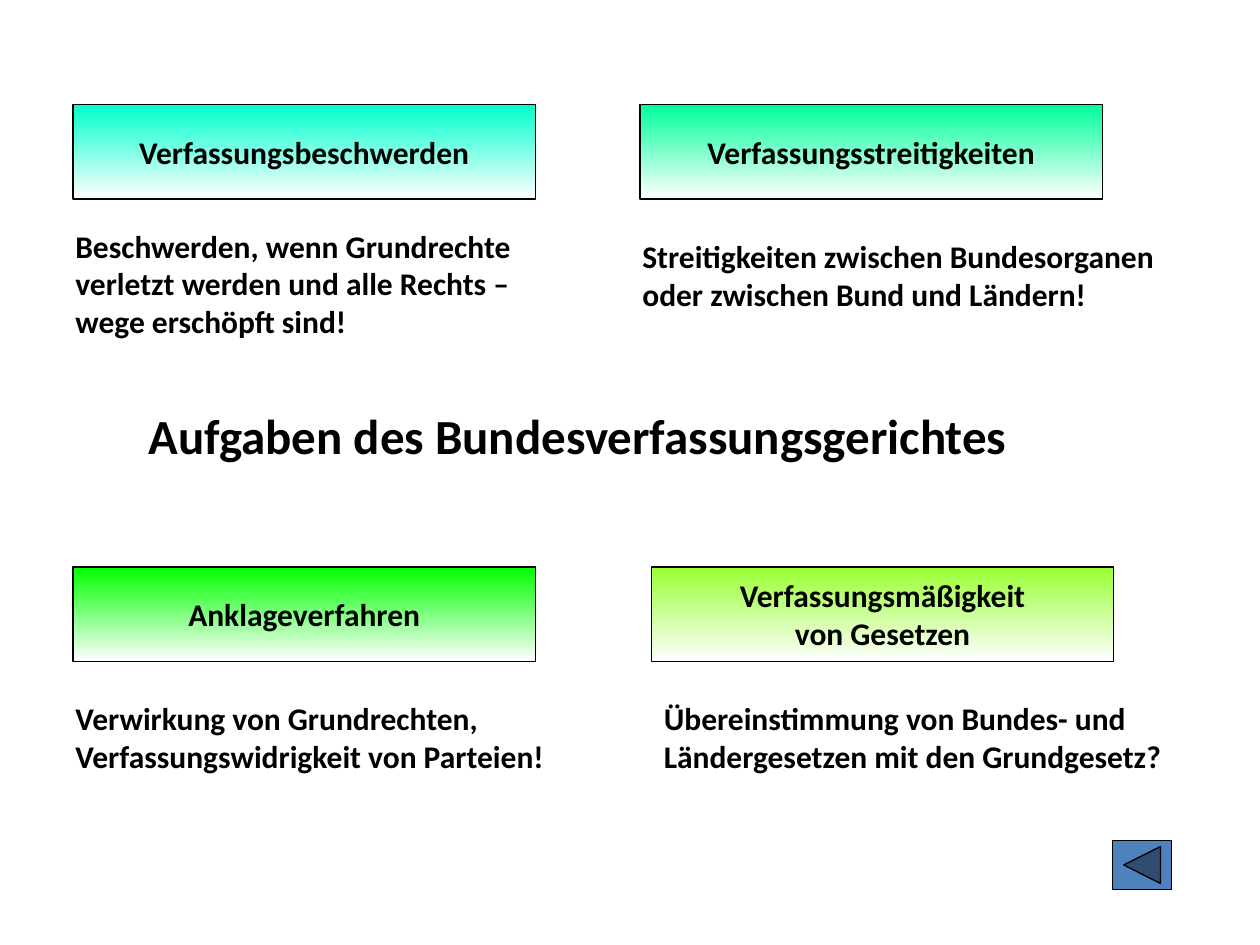
from pptx import Presentation
from pptx.dml.color import RGBColor
from pptx.enum.shapes import MSO_SHAPE
from pptx.enum.text import MSO_ANCHOR, MSO_AUTO_SIZE, PP_ALIGN
from pptx.util import Inches, Pt

RECTANGLE = MSO_SHAPE.RECTANGLE
BACK_BUTTON = MSO_SHAPE.ACTION_BUTTON_BACK_OR_PREVIOUS
LEFT, CENTER, JUSTIFY = PP_ALIGN.LEFT, PP_ALIGN.CENTER, PP_ALIGN.JUSTIFY
TOP, MIDDLE = MSO_ANCHOR.TOP, MSO_ANCHOR.MIDDLE
GROW = MSO_AUTO_SIZE.SHAPE_TO_FIT_TEXT
FONT = "Calibri"
COLORS = {
    "text": "000000",
    "line": "000000",
    "fade": "FFFFFF",
    "complaints": "00FFCC",
    "disputes": "00FF99",
    "impeachment": "00FF00",
    "laws": "99FF33",
    "button": "4F81BD",
}


def rgb(name):
    """Return the named colour."""
    return RGBColor.from_string(COLORS[name])


def write(frame, lines, size, align, anchor=TOP, wrap=False):
    """Fill a text frame with one bold paragraph per line."""
    frame.word_wrap = wrap
    frame.vertical_anchor = anchor
    frame.text = "\n".join(lines)
    for para in frame.paragraphs:
        para.alignment = align
        para.font.name = FONT
        para.font.size = Pt(size)
        para.font.bold = True
        para.font.color.rgb = rgb("text")


def add_title(page, text):
    """Place the slide title between the two rows of tasks."""
    title = page.shapes.title
    title.left, title.top = Inches(1.08), Inches(3.17)
    title.width, title.height = Inches(7.75), Inches(0.57)
    write(title.text_frame, [text], 28, LEFT, wrap=True)
    title.text_frame.auto_size = GROW


def add_outlined(page, kind, left, top, width, height):
    """Add a preset shape with a thin outline and no shadow."""
    shape = page.shapes.add_shape(
        kind, Inches(left), Inches(top), Inches(width), Inches(height))
    shape.shadow.inherit = False
    shape.line.color.rgb = rgb("line")
    shape.line.width = Pt(0.75)
    return shape


def add_heading(page, left, top, color, lines):
    """Add a task heading on a gradient that fades downwards."""
    box = add_outlined(page, RECTANGLE, left, top, 3.67, 0.75)
    box.fill.gradient()
    box.fill.gradient_angle = 270
    for stop, name, position in zip(box.fill.gradient_stops, (color, "fade"), (0, 1)):
        stop.color.rgb = rgb(name)
        stop.position = position
    write(box.text_frame, lines, 18, CENTER, MIDDLE)


def add_description(page, left, top, width, align, lines):
    """Add the explanation below a heading."""
    box = page.shapes.add_textbox(
        Inches(left), Inches(top), Inches(width), Inches(0.1 + 0.3 * len(lines)))
    write(box.text_frame, lines, 18, align)
    box.text_frame.auto_size = GROW


def add_back_button(page):
    """Add the back button in the lower right corner."""
    button = add_outlined(page, BACK_BUTTON, 8.83, 6.67, 0.47, 0.39)
    button.fill.solid()
    button.fill.fore_color.rgb = rgb("button")


def main():
    """Build the slide and save it."""
    deck = Presentation()
    deck.slide_width, deck.slide_height = Inches(10), Inches(7.5)
    page = deck.slides.add_slide(deck.slide_layouts[5])
    add_title(page, "Aufgaben des Bundesverfassungsgerichtes")

    add_heading(page, 0.58, 0.83, "complaints", ["Verfassungsbeschwerden"])
    add_heading(page, 5.08, 0.83, "disputes", ["Verfassungsstreitigkeiten"])
    add_heading(page, 0.58, 4.5, "impeachment", ["Anklageverfahren"])
    add_heading(page, 5.17, 4.5, "laws", ["Verfassungsmäßigkeit", "von Gesetzen"])

    add_description(page, 0.5, 1.75, 3.83, JUSTIFY, [
        "Beschwerden, wenn Grundrechte",
        "verletzt werden und alle Rechts –",
        "wege erschöpft sind!"])
    add_description(page, 5, 1.83, 4.4, LEFT, [
        "Streitigkeiten zwischen Bundesorganen",
        "oder zwischen Bund und Ländern!"])
    add_description(page, 0.5, 5.5, 4.1, JUSTIFY, [
        "Verwirkung von Grundrechten,",
        "Verfassungswidrigkeit von Parteien!"])
    add_description(page, 5.17, 5.5, 4.31, LEFT, [
        "Übereinstimmung von Bundes- und",
        "Ländergesetzen mit den Grundgesetz?"])

    add_back_button(page)
    deck.save("out.pptx")


if __name__ == "__main__":
    main()
